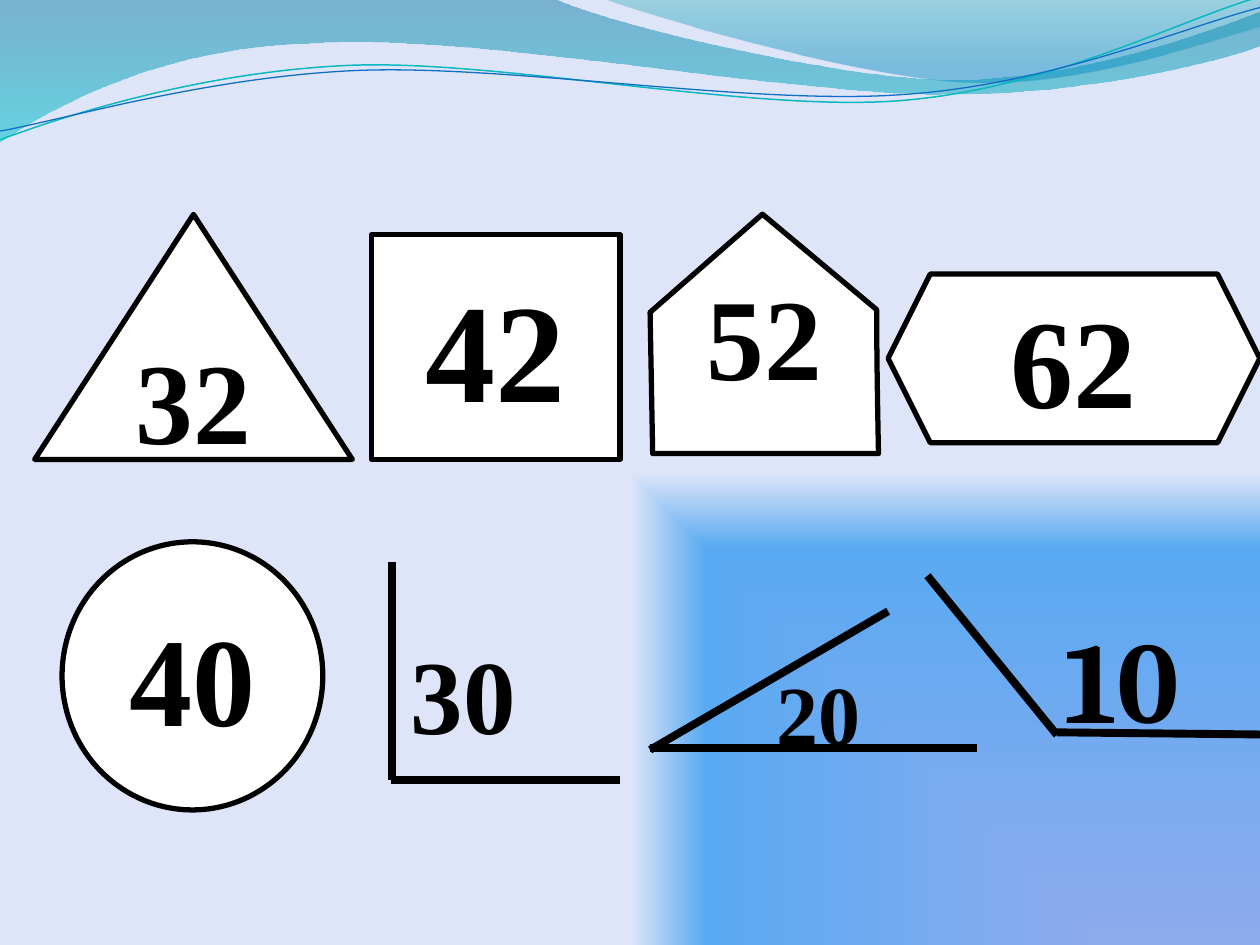
"""Build a slide of numbered figures and angles under a wave header."""
import lxml.etree
import math
import pptx
import pptx.dml.color
import pptx.enum.shapes
import pptx.enum.text
import pptx.oxml
import pptx.oxml.ns
import pptx.util

Pt = pptx.util.Pt
SHAPES = pptx.enum.shapes.MSO_SHAPE
TEXT = pptx.enum.text
NAMESPACE = pptx.oxml.ns.nsdecls("a")
BLACK, WHITE = "000000", "FFFFFF"
TILT = 2.7


def color(value):
    return pptx.dml.color.RGBColor.from_string(value)


def set_gradient(fill, owner, stops, direction):
    fill.gradient()
    gradient = owner.find(".//" + pptx.oxml.ns.qn("a:gradFill"))
    for child in list(gradient):
        gradient.remove(child)
    stop_list = "".join(
        f'<a:gs pos="{position * 1000}"><a:srgbClr val="{value}">'
        f'<a:alpha val="{alpha * 1000}"/></a:srgbClr></a:gs>'
        for position, value, alpha in stops
    )
    for xml in (f"<a:gsLst {NAMESPACE}>{stop_list}</a:gsLst>", direction):
        gradient.append(pptx.oxml.parse_xml(xml))


presentation = pptx.Presentation()
presentation.slide_width, presentation.slide_height = Pt(720), Pt(540)
slide = presentation.slides.add_slide(presentation.slide_layouts[6])
shapes = slide.shapes

set_gradient(
    slide.background.fill,
    slide._element,
    [(0, "8EABEE", 100), (84, "59AAF2", 100), (100, "DEE5F8", 100)],
    f'<a:path {NAMESPACE} path="rect"><a:fillToRect l="100000" t="100000"/></a:path>',
)

broad_wave = [
    [(0, 0)], [(316.8, -0.7)],
    [(342.7, 12.2), (478.1, 45.4), (545.8, 45.4)],
    [(614.2, 45.4), (689.8, 18.7), (720, 6.5)],
    [(720.7, 25.9)],
    [(707.8, 31.7), (626.4, 54.7), (537.1, 54)],
    [(447.8, 54), (275, 20.2), (185, 24.5)],
    [(92.9, 25.9), (33.1, 59.8), (-0.7, 81.4)], [(0, 0)],
]
right_wave = [
    [(344.9, -0.7)], [(366.5, 7.9), (491, 44.6), (553.7, 46.8)],
    [(616.3, 49.7), (691.9, 23), (720, 15.1)], [(720, 0)], [(344.9, -0.7)],
]
teal_curve = [
    [(0, 79.9)], [(34.6, 67), (113.8, 41), (199.4, 37.4)],
    [(284.4, 33.8), (427, 64.1), (513.4, 57.6)],
    [(599.8, 51.1), (675.4, 10.8), (718.6, -1.4)],
]
blue_curve = [
    [(0, 74.9)], [(33.8, 69.1), (118.1, 43.9), (203.8, 40.3)],
    [(290.2, 36.7), (429.8, 60.5), (516.2, 54)],
    [(601.9, 48.2), (677.5, 15.1), (720, 4.3)],
]
house = [
    [(371.5, 178.5)], [(435.7, 122.4)], [(501, 177)],
    [(501, 204.5), (501.5, 232), (502, 259.2)], [(373, 259.2)], [(371.5, 178.5)],
]

outlines = []
for segments, closed, tilt, center_y in (
    (broad_wave, True, 0, 0), (right_wave, True, 0, 0),
    (teal_curve, False, TILT, 41.4), (blue_curve, False, TILT, 42.5), (house, True, 0, 0),
):
    cosine, sine = math.cos(math.radians(tilt)), math.sin(math.radians(tilt))
    turned = [
        [
            (
                Pt(360 + (x - 360) * cosine - (y - center_y) * sine),
                Pt(center_y + (x - 360) * sine + (y - center_y) * cosine),
            )
            for x, y in segment
        ]
        for segment in segments
    ]
    ends = [segment[-1] for segment in turned]
    builder = shapes.build_freeform(*ends[0])
    builder.add_line_segments(ends[1:], close=closed)
    shape = builder.convert_to_shape()
    left, top = shape.left, shape.top
    steps = shape._element.findall(".//" + pptx.oxml.ns.qn("a:lnTo"))
    for step, segment in zip(steps, turned[1:]):
        if len(segment) == 3:
            corners = "".join(f'<a:pt x="{x - left}" y="{y - top}"/>' for x, y in segment)
            step.getparent().replace(step, pptx.oxml.parse_xml(
                f"<a:cubicBezTo {NAMESPACE}>{corners}</a:cubicBezTo>"
            ))
    shape.rotation = -tilt
    shape.shadow.inherit = False
    outlines.append(shape)

for shape, stops in zip(outlines[:2], (
    [(0, "0074A1", 45), (100, "00C6CF", 55)],
    [(0, "00A1A9", 30), (80, "008BBF", 45)],
)):
    direction = f'<a:lin {NAMESPACE} ang="5400000" scaled="0"/>'
    set_gradient(shape.fill, shape._element, stops, direction)
    shape.line.fill.background()

for shape, value, width in zip(outlines[2:4], ("0AB8BF", "0F6FC6"), (0.85, 0.75)):
    shape.fill.background()
    shape.line.color.rgb = color(value)
    shape.line.width = Pt(width)

labels = []
for kind, box, text, size, outlined in (
    (SHAPES.ISOSCELES_TRIANGLE, (19.8, 122.5, 181.5, 140), "32", 66, True),
    (SHAPES.RECTANGLE, (212.5, 134, 141.8, 128.5), "42", 80, True),
    (None, None, "52", 66, True),
    (SHAPES.HEXAGON, (507.5, 156.6, 212.4, 96.4), "62", 72, True),
    (SHAPES.OVAL, (35.5, 309.6, 149, 153.2), "40", 72, False),
):
    if kind:
        shape = shapes.add_shape(kind, *map(Pt, box))
    else:
        shape = outlines[-1]
        shapes._spTree.append(shape._element)
    shape.shadow.inherit = False
    shape.fill.solid()
    shape.fill.fore_color.rgb = color(WHITE)
    shape.line.color.rgb = color(BLACK)
    shape.line.width = Pt(3)
    shape.text_frame.vertical_anchor = TEXT.MSO_ANCHOR.MIDDLE
    shape.text_frame.paragraphs[0].alignment = TEXT.PP_ALIGN.CENTER
    labels.append((shape, text, size, "Times New Roman", outlined))

for sides, box, text, size, font_name in (
    (((224, 321, 224, 445.7), (223.5, 445.7, 354.3, 445.7)),
     (227.5, 356, 79, 80), "30", 60, "Times New Roman"),
    (((507.5, 349.3, 371.5, 428.5), (371.5, 427.5, 558.5, 427.5)),
     (436.5, 374.5, 82, 65.5), "20", 48, "Times New Roman"),
    (((530, 329, 604, 420), (604, 418.5, 720, 419.7)),
     (601, 343.8, 81.5, 87), "10", 66, "Cambria"),
):
    for side in sides:
        line = shapes.add_connector(
            pptx.enum.shapes.MSO_CONNECTOR.STRAIGHT, *map(Pt, side)
        )
        line.line.color.rgb = color(BLACK)
        line.line.width = Pt(4.5)
        lxml.etree.SubElement(line._element.spPr, pptx.oxml.ns.qn("a:effectLst"))
    shape = shapes.add_textbox(*map(Pt, box))
    shape.text_frame.auto_size = TEXT.MSO_AUTO_SIZE.SHAPE_TO_FIT_TEXT
    labels.append((shape, text, size, font_name, False))

for shape, text, size, font_name, outlined in labels:
    shape.text_frame.word_wrap = True
    run = shape.text_frame.paragraphs[0].add_run()
    run.text = text
    run.font.name = font_name
    run.font.size = Pt(size)
    run.font.bold = True
    run.font.color.rgb = color(BLACK)
    if outlined:
        run._r.get_or_add_rPr().insert(0, pptx.oxml.parse_xml(
            f'<a:ln {NAMESPACE} w="{Pt(1.4)}"><a:solidFill>'
            f'<a:srgbClr val="{WHITE}"/></a:solidFill></a:ln>'
        ))

presentation.save("out.pptx")
